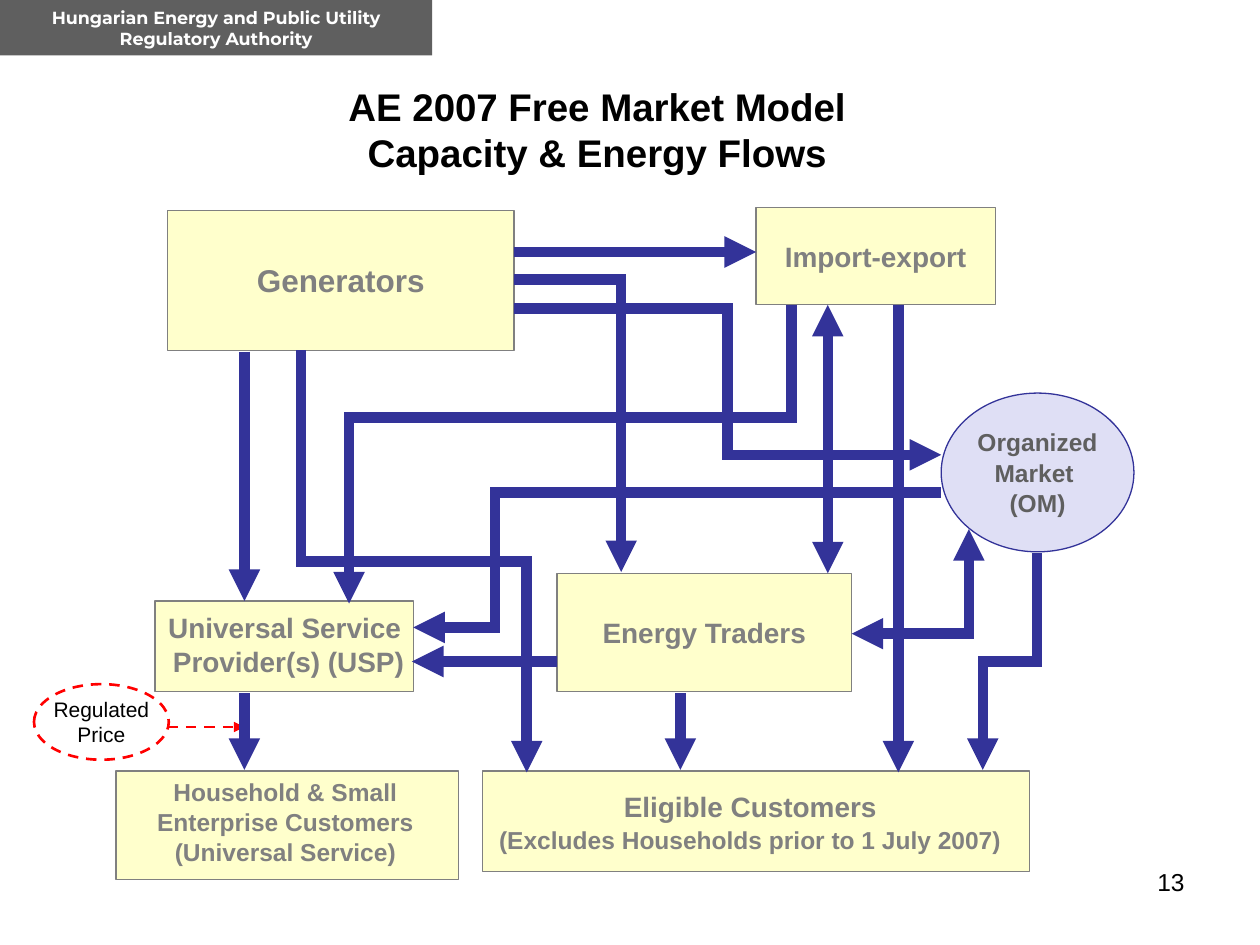
from dataclasses import dataclass

from lxml import etree
from pptx import Presentation
from pptx.dml.color import RGBColor
from pptx.enum.dml import MSO_LINE
from pptx.enum.shapes import MSO_CONNECTOR, MSO_SHAPE
from pptx.enum.text import MSO_ANCHOR, PP_ALIGN
from pptx.oxml.ns import qn
from pptx.util import Inches, Pt

RECT, OVAL = MSO_SHAPE.RECTANGLE, MSO_SHAPE.OVAL
STRAIGHT, ELBOW = MSO_CONNECTOR.STRAIGHT, MSO_CONNECTOR.ELBOW
TOP, MIDDLE = MSO_ANCHOR.TOP, MSO_ANCHOR.MIDDLE
CENTER, RIGHT = PP_ALIGN.CENTER, PP_ALIGN.RIGHT
DASH = MSO_LINE.DASH
COLORS = {
    "white": "FFFFFF", "black": "000000", "red": "FF0000", "gray": "808080",
    "dark": "5F5F5F", "cream": "FFFFCC", "lilac": "DFDFF5", "navy": "333399",
}


@dataclass
class Node:
    at: tuple[float, float, float, float]
    kind: MSO_SHAPE = RECT
    fill: str = "cream"
    line: str | None = "gray"
    width: float = 0.75
    dashed: bool = False


@dataclass
class Label:
    at: tuple[float, float, float, float]
    lines: tuple[str, ...]
    sizes: tuple[float, ...]
    color: str = "gray"
    bold: bool = True
    font: str = "Arial"
    anchor: MSO_ANCHOR = MIDDLE
    align: PP_ALIGN = CENTER
    wrap: bool = False
    before: float = 0


@dataclass
class Flow:
    start: tuple[float, float]
    end: tuple[float, float]
    route: str = "straight"
    bend: float = 0.5
    both: bool = False
    color: str = "navy"
    width: float = 6
    dashed: bool = False


GENERATORS = (1.33, 1.67, 2.75, 1.11)
IMPORT_EXPORT = (6, 1.65, 1.9, 0.77)
TRADERS = (4.42, 4.55, 2.34, 0.94)
MARKET = (7.47, 3.12, 1.53, 1.26)
PRICE = (0.27, 5.43, 1.07, 0.6)
HEADER = (0, 0, 3.43, 0.44)

NODES = [
    Node(PRICE, OVAL, "white", "red", 1.5, True),
    Node((1.23, 4.77, 2.05, 0.72)),
    Node((0.92, 6.12, 2.72, 0.86)),
    Node(GENERATORS),
    Node(TRADERS),
    Node((3.83, 6.12, 4.34, 0.8)),
    Node(IMPORT_EXPORT),
    Node(MARKET, OVAL, "lilac", "navy"),
    Node(HEADER, fill="dark", line=None),
]
LABELS = [
    Label(PRICE, ("Regulated", "Price"), (12, 12), "black", False),
    Label((1.79, 0.68, 5.9, 0.69),
          ("AE 2007 Free Market Model\vCapacity & Energy Flows",), (22,), "black", wrap=True),
    Label(GENERATORS, ("Generators",), (18,)),
    Label(TRADERS, ("Energy Traders",), (16,)),
    Label(IMPORT_EXPORT, ("Import-export",), (16,)),
    Label(MARKET, ("Organized", "Market ", "(OM)"), (14, 14, 14), "dark", before=0.7),
    Label((1.23, 4.8, 2.12, 0.64), ("Universal Service ", "Provider(s) (USP)"), (16, 16), anchor=TOP),
    Label((0.92, 6.12, 2.69, 0.81),
          ("Household & Small Enterprise Customers", "(Universal Service)"), (14, 14),
          anchor=TOP, wrap=True, before=0.7),
    Label((3.83, 6.22, 4.25, 0.61),
          ("Eligible Customers", "(Excludes Households prior to 1 July 2007)"), (16, 14),
          anchor=TOP, wrap=True, before=0.7),
    Label((7.17, 6.83, 2.33, 0.52), ("13",), (14,), "black", False,
          anchor=TOP, align=RIGHT, wrap=True),
    Label(HEADER, ("Hungarian Energy and Public Utility Regulatory Authority",), (10,), "white",
          font="Montserrat", wrap=True),
]
FLOWS = [
    Flow((4.08, 2), (6, 2)),
    Flow((1.33, 5.77), (1.94, 5.77), color="red", width=1.5, dashed=True),
    Flow((1.94, 2.79), (1.94, 4.77)),
    Flow((2.39, 2.78), (4.18, 6.13), "down"),
    Flow((8.23, 4.39), (7.8, 6.11), "down"),
    Flow((4.42, 5.25), (3.27, 5.25)),
    Flow((7.13, 2.42), (7.13, 6.13)),
    Flow((7.47, 3.91), (3.28, 4.98), "across", 0.845),
    Flow((4.08, 2.45), (7.47, 3.61), "across"),
    Flow((6.28, 2.42), (2.77, 4.79), "down", 0.378),
    Flow((6.76, 5.03), (7.69, 4.2), "corner", both=True),
    Flow((6.57, 2.42), (6.57, 4.55), both=True),
    Flow((5.4, 5.5), (5.4, 6.11)),
    Flow((4.08, 2.22), (4.93, 4.54), "corner"),
    Flow((1.94, 5.5), (1.94, 6.11)),
]


def rgb(name: str) -> RGBColor:
    """Return the named colour."""
    return RGBColor.from_string(COLORS[name])


def draw_node(s, node: Node) -> None:
    """Draw a filled and outlined shape."""
    sp = s.shapes.add_shape(node.kind, *map(Inches, node.at))
    sp.shadow.inherit = False
    sp.fill.solid()
    sp.fill.fore_color.rgb = rgb(node.fill)
    if node.line is None:
        sp.line.fill.background()
        return
    sp.line.color.rgb = rgb(node.line)
    sp.line.width = Pt(node.width)
    if node.dashed:
        sp.line.dash_style = DASH


def draw_label(s, label: Label) -> None:
    """Draw the text of a box."""
    tf = s.shapes.add_textbox(*map(Inches, label.at)).text_frame
    tf.word_wrap = label.wrap
    tf.vertical_anchor = label.anchor
    for i, (text, size) in enumerate(zip(label.lines, label.sizes)):
        p = tf.add_paragraph() if i else tf.paragraphs[0]
        p.text = text
        p.alignment = label.align
        if i and label.before:
            p.space_before = Pt(label.before)
        for r in p.runs:
            for key, value in {"name": label.font, "size": Pt(size), "bold": label.bold}.items():
                setattr(r.font, key, value)
            r.font.color.rgb = rgb(label.color)


def draw_flow(s, flow: Flow) -> None:
    """Draw an arrow along its straight, cornered or stepped route."""
    (x1, y1), (x2, y2) = flow.start, flow.end
    turn = 0
    if flow.route == "down":
        mx, my = (x1 + x2) / 2, (y1 + y2) / 2
        turn, sign = (270, 1) if x2 > x1 else (90, -1)
        half_w, half_h = sign * (y2 - y1) / 2, abs(x2 - x1) / 2
        x1, y1, x2, y2 = mx + half_w, my - half_h, mx - half_w, my + half_h
    kind = STRAIGHT if flow.route == "straight" else ELBOW
    c = s.shapes.add_connector(kind, *map(Inches, (x1, y1, x2, y2)))
    c.line.color.rgb = rgb(flow.color)
    c.line.width = Pt(flow.width)
    if flow.dashed:
        c.line.dash_style = DASH
    props = c._element.spPr
    if turn:
        props.find(qn("a:xfrm")).set("rot", str(turn * 60000))
    geom = props.find(qn("a:prstGeom"))
    if flow.route == "corner":
        geom.set("prst", "bentConnector2")
    elif kind == ELBOW:
        etree.SubElement(geom.find(qn("a:avLst")), qn("a:gd"),
                         name="adj1", fmla=f"val {round(flow.bend * 100000)}")
    ln = props.find(qn("a:ln"))
    etree.SubElement(ln, qn("a:miter"), lim="800000")
    for end in ("headEnd", "tailEnd") if flow.both else ("tailEnd",):
        etree.SubElement(ln, qn(f"a:{end}"), type="triangle")
    etree.SubElement(props, qn("a:effectLst"))


def main() -> None:
    """Build the market model slide."""
    prs = Presentation()
    prs.slide_width, prs.slide_height = Inches(10), Inches(7.5)
    s = prs.slides.add_slide(prs.slide_layouts[6])
    for draw, items in ((draw_node, NODES), (draw_label, LABELS), (draw_flow, FLOWS)):
        for item in items:
            draw(s, item)
    prs.save("out.pptx")


if __name__ == "__main__":
    main()
